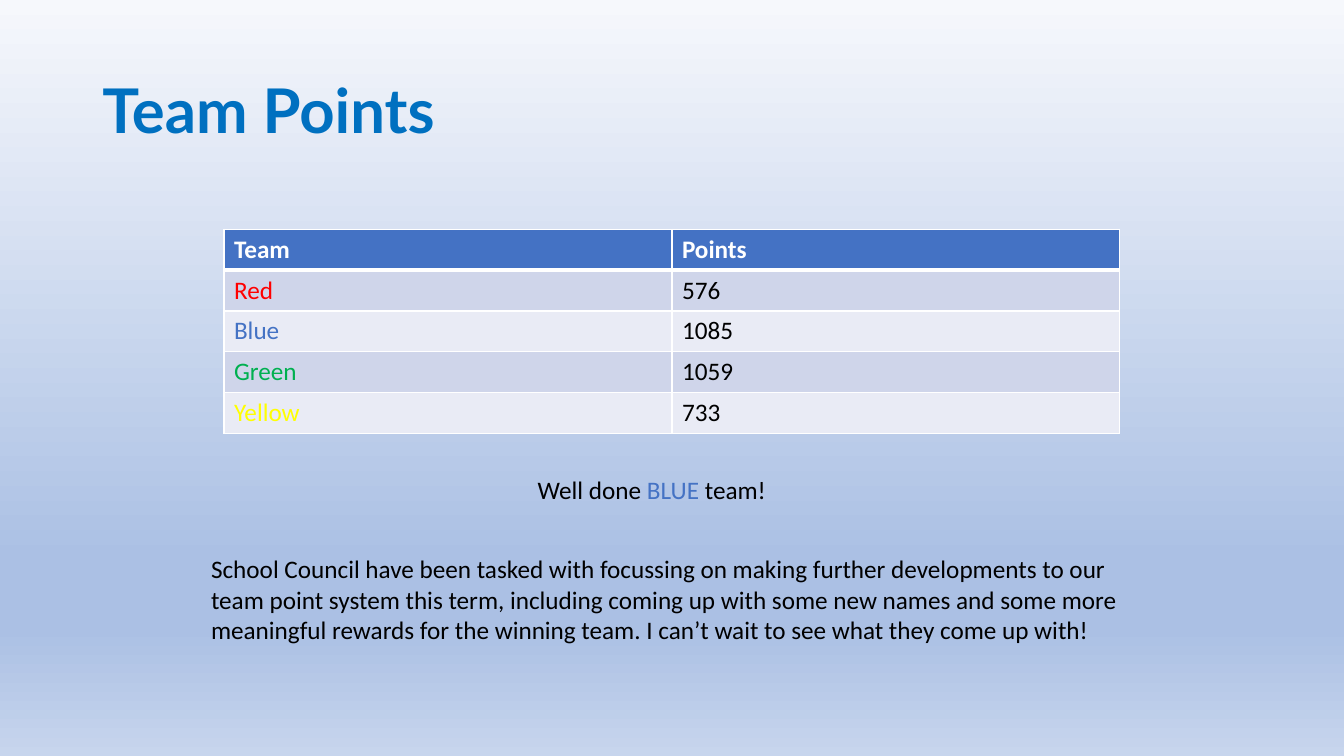
from pptx import Presentation
from pptx.dml.color import RGBColor
from pptx.enum.text import MSO_ANCHOR, MSO_AUTO_SIZE, PP_ALIGN
from pptx.oxml import parse_xml
from pptx.oxml.ns import nsdecls, qn
from pptx.util import Pt

BLACK, WHITE, BLUE = "000000", "FFFFFF", "4472C4"
BANDS = ["CFD5EA", "E9EBF5"]
SKY = [(0, "F6F8FC"), (74, "ABC0E4"), (83, "ABC0E4"), (100, "C7D5ED")]
TEAMS = [
    ("Red", "576", "FF0000"),
    ("Blue", "1085", BLUE),
    ("Green", "1059", "00B050"),
    ("Yellow", "733", "FFFF00"),
]
COUNCIL_NEWS = (
    "School Council have been tasked with focussing on making further "
    "developments to our team point system this term, including coming up "
    "with some new names and some more meaningful rewards for the winning "
    "team. I can’t wait to see what they come up with!"
)


def color(value):
    return RGBColor.from_string(value)


class SlideBuilder:
    body = {"name": "Calibri", "size": Pt(18), "bold": False}
    heading = {"name": "Lato", "size": Pt(44), "bold": True}

    def __init__(self, deck):
        self.page = deck.slides.add_slide(deck.slide_layouts[5])

    def background(self, stops):
        fill = self.page.background.fill
        fill.gradient()
        fill.gradient_angle = 270
        stop_list = self.page.element.find(".//" + qn("a:gsLst"))
        for stop in list(stop_list):
            stop_list.remove(stop)
        for percent, shade in stops:
            stop_list.append(parse_xml(
                f'<a:gs {nsdecls("a")} pos="{percent * 1000}">'
                f'<a:srgbClr val="{shade}"/></a:gs>'))

    def add_spans(self, para, spans, style):
        for text, shade in spans:
            span = para.add_run()
            span.text = text
            for name, value in style.items():
                setattr(span.font, name, value)
            span.font.color.rgb = color(shade)

    def title(self, text, shade, left, top, width, height):
        box = self.page.shapes.title
        place = {"left": left, "top": top, "width": width, "height": height}
        for name, value in place.items():
            setattr(box, name, Pt(value))
        box.text_frame.vertical_anchor = MSO_ANCHOR.MIDDLE
        para = box.text_frame.paragraphs[0]
        para.alignment = PP_ALIGN.LEFT
        para.line_spacing = 0.9
        self.add_spans(para, [(text, shade)], self.heading)

    def text(self, spans, left, top, width, height):
        box = self.page.shapes.add_textbox(
            Pt(left), Pt(top), Pt(width), Pt(height))
        box.text_frame.word_wrap = True
        box.text_frame.auto_size = MSO_AUTO_SIZE.SHAPE_TO_FIT_TEXT
        self.add_spans(box.text_frame.paragraphs[0], spans, self.body)

    def cell(self, cell, text, shade, fill, style, borders):
        self.add_spans(cell.text_frame.paragraphs[0], [(text, shade)], style)
        properties = cell._tc.get_or_add_tcPr()
        for side, weight in borders.items():
            properties.append(parse_xml(
                f'<a:ln{side} {nsdecls("a")} w="{Pt(weight)}"><a:solidFill>'
                f'<a:srgbClr val="{WHITE}"/></a:solidFill></a:ln{side}>'))
        cell.fill.solid()
        cell.fill.fore_color.rgb = color(fill)

    def table(self, headings, teams, left, top, width, height):
        rows = len(teams) + 1
        grid = self.page.shapes.add_table(
            rows, len(headings), Pt(left), Pt(top), Pt(width), Pt(height)).table
        thin = {"L": 1, "R": 1, "T": 1, "B": 1}
        for column, heading in enumerate(headings):
            self.cell(grid.cell(0, column), heading, WHITE, BLUE,
                      self.body | {"bold": True}, thin | {"B": 3})
        for row, (team, points, shade) in enumerate(teams, 1):
            borders = thin | {"T": 3 if row == 1 else 1}
            band = BANDS[(row - 1) % 2]
            for column, (text, ink) in enumerate([(team, shade), (points, BLACK)]):
                self.cell(grid.cell(row, column), text, ink, band,
                          self.body, borders)


def main():
    deck = Presentation()
    deck.slide_width, deck.slide_height = Pt(960), Pt(540)
    slide = SlideBuilder(deck)
    slide.background(SKY)
    slide.title("Team Points", "0070C0", 66, 28.75, 828, 104.4)
    slide.table(["Team", "Points"], TEAMS, 160, 163.7, 640, 146)
    slide.text([("Well done ", BLACK), ("BLUE", BLUE), (" team!", BLACK)],
               377, 335, 205, 29)
    slide.text([(COUNCIL_NEWS, BLACK)], 143.7, 392, 695, 72.7)
    deck.save("out.pptx")


if __name__ == "__main__":
    main()
